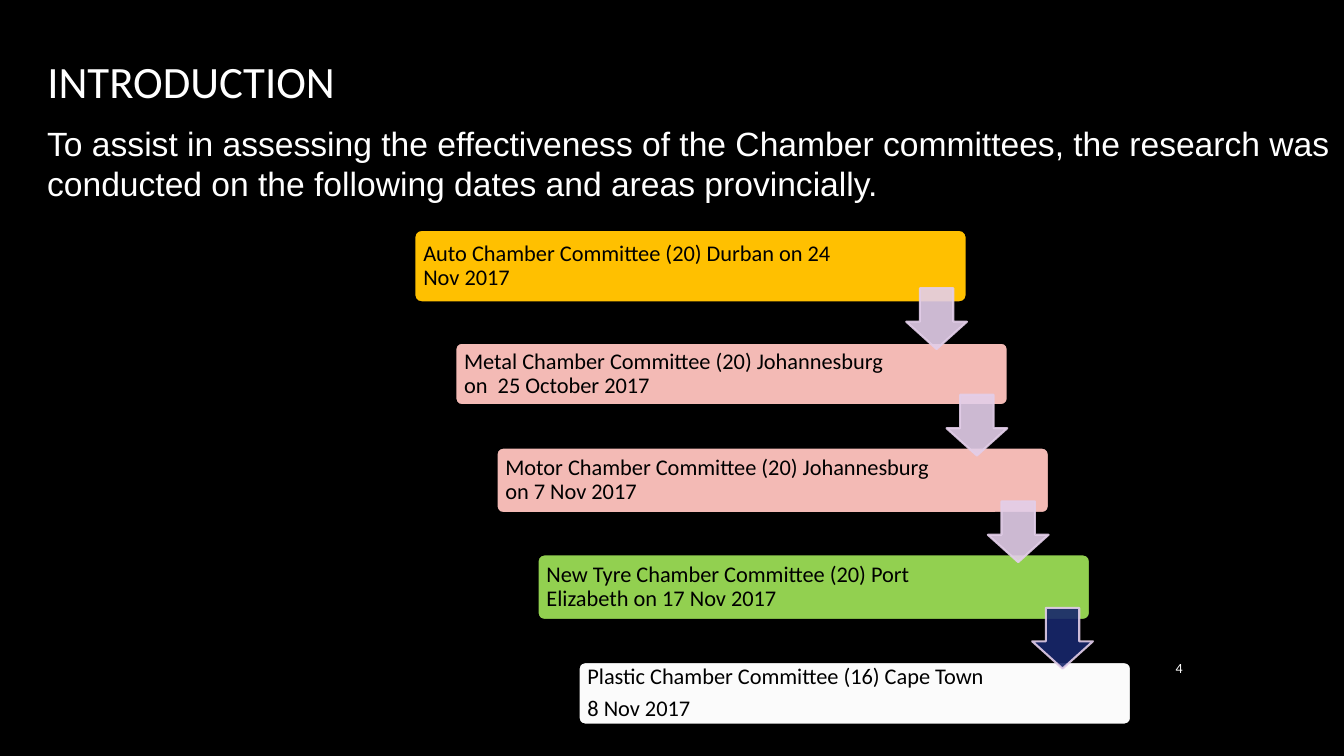
from dataclasses import dataclass
from typing import Optional

import lxml.etree
import pptx
import pptx.dml.color
import pptx.enum.shapes
import pptx.enum.text
import pptx.oxml.ns
import pptx.util

Pt = pptx.util.Pt
RGB = pptx.dml.color.RGBColor.from_string
Align = pptx.enum.text.PP_ALIGN
Anchor = pptx.enum.text.MSO_ANCHOR
Preset = pptx.enum.shapes.MSO_SHAPE


@dataclass(frozen=True)
class Theme:
    background: str = "000000"
    light_text: str = "FFFFFF"
    dark_text: str = "000000"
    box_line: str = "000000"
    arrow_line: str = "E3CEE9"
    gold: str = "FFC000"
    pink: str = "F3BAB5"
    green: str = "92D050"
    white: str = "FBFBFB"
    lilac: str = "E3CEE9"
    navy: str = "18276C"
    heading_font: str = "Calibri"
    intro_font: str = "Arial"
    title_size: float = 32
    intro_size: float = 24
    step_size: float = 16
    number_size: float = 10


THEME = Theme()


@dataclass(frozen=True)
class Arrow:
    left: float
    fill: str


@dataclass(frozen=True)
class Committee:
    text: str
    top: float
    height: float
    fill: str
    arrow: Optional[Arrow] = None


COMMITTEES = [
    Committee("Auto Chamber Committee (20) Durban on 24 Nov 2017",
              164.2, 51.8, THEME.gold, Arrow(647.3, THEME.lilac)),
    Committee("Metal Chamber Committee (20) Johannesburg on  25 October 2017",
              244.8, 44.6, THEME.pink, Arrow(676.1, THEME.lilac)),
    Committee("Motor Chamber Committee (20) Johannesburg on 7 Nov 2017",
              319.7, 46.8, THEME.pink, Arrow(705.6, THEME.lilac)),
    Committee("New Tyre Chamber Committee (20) Port Elizabeth on 17 Nov 2017",
              396, 46.8, THEME.green, Arrow(737.3, THEME.navy)),
    Committee("Plastic Chamber Committee (16) Cape Town\n8 Nov 2017",
              473, 44.6, THEME.white),
]
BOX_LEFT, BOX_INDENT, BOX_WIDTH = 295.9, 29.35, 394.6
ARROW_TOP, ARROW_STEP, ARROW_SIZE = 205.9, 76.1, 43.4
ARROW_OPACITY = 90


def write(shape, text: str, font: str, size: float, color: str,
          align=Align.LEFT) -> None:
    shape.text_frame.text = text
    for paragraph in shape.text_frame.paragraphs:
        paragraph.alignment = align
        for run in paragraph.runs:
            run.font.name = font
            run.font.size = Pt(size)
            run.font.color.rgb = RGB(color)


def add_preset(slide, preset, left: float, top: float, width: float,
               height: float, fill: str, line: str):
    shape = slide.shapes.add_shape(
        preset, Pt(left), Pt(top), Pt(width), Pt(height))
    shape.shadow.inherit = False
    shape.fill.solid()
    shape.fill.fore_color.rgb = RGB(fill)
    shape.line.color.rgb = RGB(line)
    shape.line.width = Pt(1.5)
    return shape


def set_opacity(shape, percent: int) -> None:
    """Apply the opacity to both fill and outline."""
    qn = pptx.oxml.ns.qn
    for color in shape.element.spPr.iter(qn("a:srgbClr")):
        alpha = lxml.etree.SubElement(color, qn("a:alpha"))
        alpha.set("val", str(percent * 1000))


def add_committee(slide, index: int, committee: Committee) -> None:
    box = add_preset(slide, Preset.ROUNDED_RECTANGLE,
                     BOX_LEFT + BOX_INDENT * index, committee.top, BOX_WIDTH,
                     committee.height, committee.fill, THEME.box_line)
    box.adjustments[0] = 0.1
    write(box, committee.text, THEME.heading_font, THEME.step_size,
          THEME.dark_text)
    frame = box.text_frame
    frame.word_wrap = True
    frame.vertical_anchor = Anchor.MIDDLE
    frame.margin_left = frame.margin_top = frame.margin_bottom = Pt(5)
    frame.margin_right = Pt(79)
    for paragraph in frame.paragraphs:
        paragraph.line_spacing = 0.9
        paragraph.space_after = Pt(5.6)


def add_arrow(slide, index: int, arrow: Arrow) -> None:
    shape = add_preset(slide, Preset.DOWN_ARROW, arrow.left,
                       ARROW_TOP + ARROW_STEP * index, ARROW_SIZE, ARROW_SIZE,
                       arrow.fill, THEME.arrow_line)
    shape.adjustments[0] = 0.55
    shape.adjustments[1] = 0.45
    set_opacity(shape, ARROW_OPACITY)


def add_title(slide) -> None:
    title = slide.shapes.title
    title.left, title.top = Pt(26.6), Pt(0)
    title.width, title.height = Pt(797.8), Pt(114.5)
    write(title, "INTRODUCTION", THEME.heading_font, THEME.title_size,
          THEME.light_text)
    title.text_frame.vertical_anchor = Anchor.MIDDLE


def add_introduction(slide) -> None:
    box = slide.shapes.add_textbox(Pt(26.6), Pt(82.1), Pt(932), Pt(87))
    write(box, "To assist in assessing the effectiveness of the Chamber "
          "committees, the research was\nconducted on the following dates "
          "and areas provincially.",
          THEME.intro_font, THEME.intro_size, THEME.light_text)
    box.text_frame.word_wrap = False
    box.text_frame.margin_top = Pt(5.4)


def add_slide_number(slide) -> None:
    box = slide.shapes.add_textbox(Pt(808.6), Pt(462.2), Pt(43.2), Pt(29.5))
    write(box, "4", THEME.heading_font, THEME.number_size, THEME.light_text,
          Align.RIGHT)
    box.text_frame.word_wrap = True
    box.text_frame.vertical_anchor = Anchor.MIDDLE


def main() -> None:
    presentation = pptx.Presentation()
    presentation.slide_width, presentation.slide_height = Pt(960), Pt(540)
    slide = presentation.slides.add_slide(
        presentation.slide_layouts.get_by_name("Title Only"))
    slide.background.fill.solid()
    slide.background.fill.fore_color.rgb = RGB(THEME.background)
    add_title(slide)
    add_slide_number(slide)
    add_introduction(slide)
    for index, committee in enumerate(COMMITTEES):
        add_committee(slide, index, committee)
    for index, committee in enumerate(COMMITTEES):
        if committee.arrow:
            add_arrow(slide, index, committee.arrow)
    presentation.save("out.pptx")


if __name__ == "__main__":
    main()
